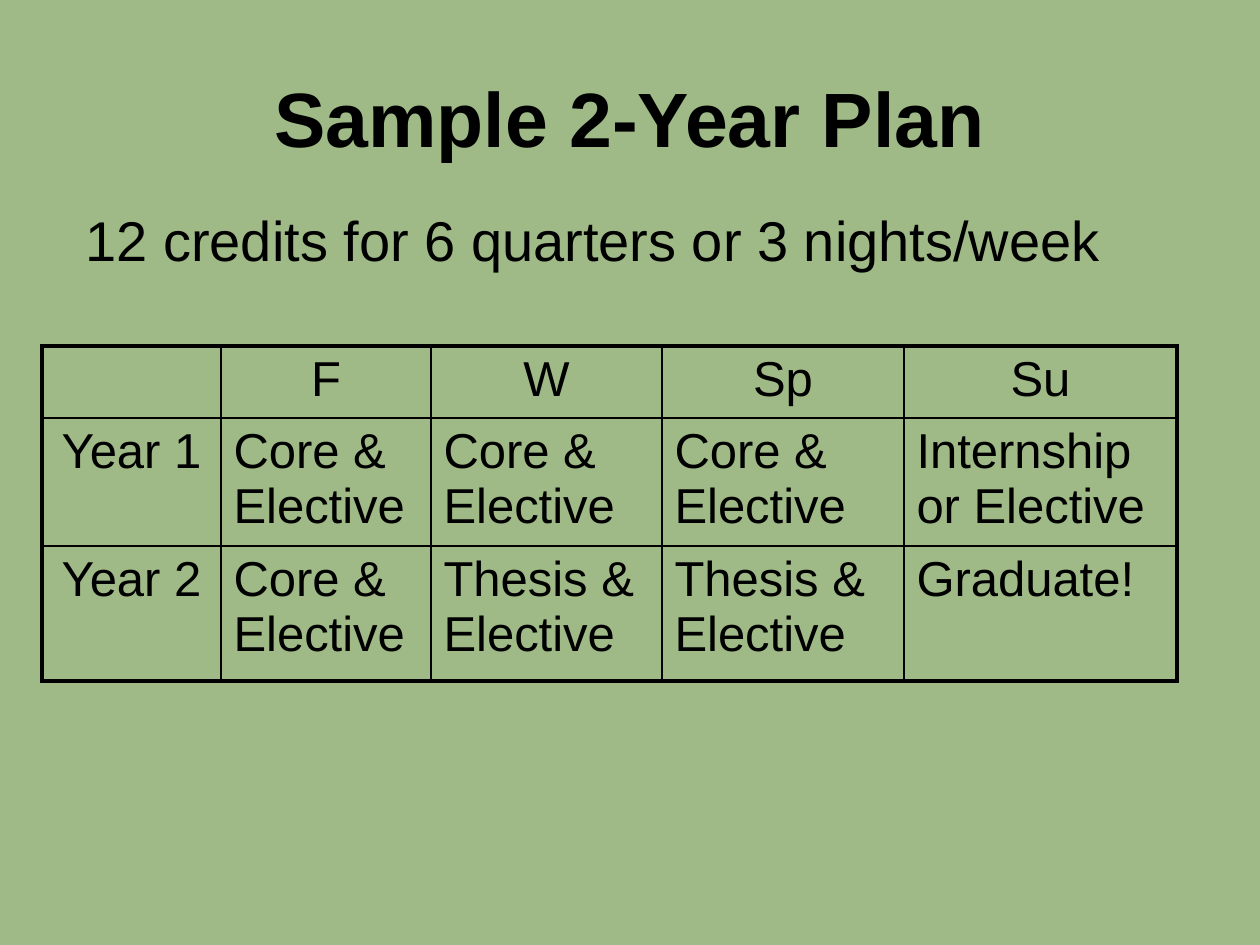
from lxml import etree
from pptx import Presentation
from pptx.dml.color import RGBColor
from pptx.enum.text import MSO_ANCHOR, MSO_AUTO_SIZE, PP_ALIGN
from pptx.oxml.ns import qn
from pptx.util import Pt

PX = 914400 / 126
CENTER, LEFT = PP_ALIGN.CENTER, PP_ALIGN.LEFT
MIDDLE = MSO_ANCHOR.MIDDLE
GROW = MSO_AUTO_SIZE.SHAPE_TO_FIT_TEXT
TITLE_ONLY = 5
INK, GREEN = "000000", "9FBA87"
THICK, THIN = 2.25, 1

COLS = [179, 210, 231, 242, 273]
ROWS = [72, 128, 135]
PLAN = [
    ["", "F", "W", "Sp", "Su"],
    ["Year 1", "Core & Elective", "Core & Elective", "Core & Elective",
     "Internship or Elective"],
    ["Year 2", "Core & Elective", "Thesis & Elective", "Thesis & Elective",
     "Graduate!"],
]


def px(n):
    return round(n * PX)


def color(code):
    return RGBColor.from_string(code)


def write(frame, text, size=28, bold=False, align=LEFT, before=0):
    """Fill a text frame; before is the space above in percent of a line."""
    frame.word_wrap = True
    para = frame.paragraphs[0]
    para.alignment = align
    if before:
        space = etree.SubElement(para._p.get_or_add_pPr(), qn("a:spcBef"))
        etree.SubElement(space, qn("a:spcPct"), val=str(before * 1000))
    run = para.add_run()
    run.text = text
    font = run.font
    font.name, font.size, font.bold = "Arial", Pt(size), bold
    font.color.rgb = color(INK)


def add_title(slide, text):
    title = slide.shapes.title
    title.left, title.top = px(63), px(38)
    title.width, title.height = px(1134), px(157)
    title.text_frame.vertical_anchor = MIDDLE
    write(title.text_frame, text, size=44, bold=True, align=CENTER)


def add_note(slide, text):
    box = slide.shapes.add_textbox(px(73), px(199), px(1071), px(79))
    box.text_frame.auto_size = GROW
    write(box.text_frame, text, size=32, before=50)


def border(cell, widths):
    """Draw the left, right, top and bottom edges, widths in points."""
    props = cell._tc.get_or_add_tcPr()
    for i, (side, width) in enumerate(zip("LRTB", widths)):
        line = etree.Element(qn("a:ln" + side), w=str(Pt(width)))
        fill = etree.SubElement(line, qn("a:solidFill"))
        etree.SubElement(fill, qn("a:srgbClr"), val=INK)
        props.insert(i, line)


def add_plan(slide):
    rows, cols = len(ROWS), len(COLS)
    table = slide.shapes.add_table(
        rows, cols, px(42), px(346), px(sum(COLS)), px(sum(ROWS))).table
    table.first_row = table.horz_banding = False
    for col, width in zip(table.columns, COLS):
        col.width = px(width)
    for row, height in zip(table.rows, ROWS):
        row.height = px(height)
    for r, line in enumerate(PLAN):
        for c, text in enumerate(line):
            cell = table.cell(r, c)
            cell.fill.background()
            outer = (c == 0, c == cols - 1, r == 0, r == rows - 1)
            border(cell, [THICK if edge else THIN for edge in outer])
            head = r == 0 or c == 0
            write(cell.text_frame, text, before=20,
                  align=CENTER if head else LEFT)


def main():
    deck = Presentation()
    deck.slide_width, deck.slide_height = px(1260), px(945)
    slide = deck.slides.add_slide(deck.slide_layouts[TITLE_ONLY])
    back = slide.background.fill
    back.solid()
    back.fore_color.rgb = color(GREEN)
    add_title(slide, "Sample 2-Year Plan")
    add_plan(slide)
    add_note(slide, "12 credits for 6 quarters or 3 nights/week")
    deck.save("out.pptx")


if __name__ == "__main__":
    main()
